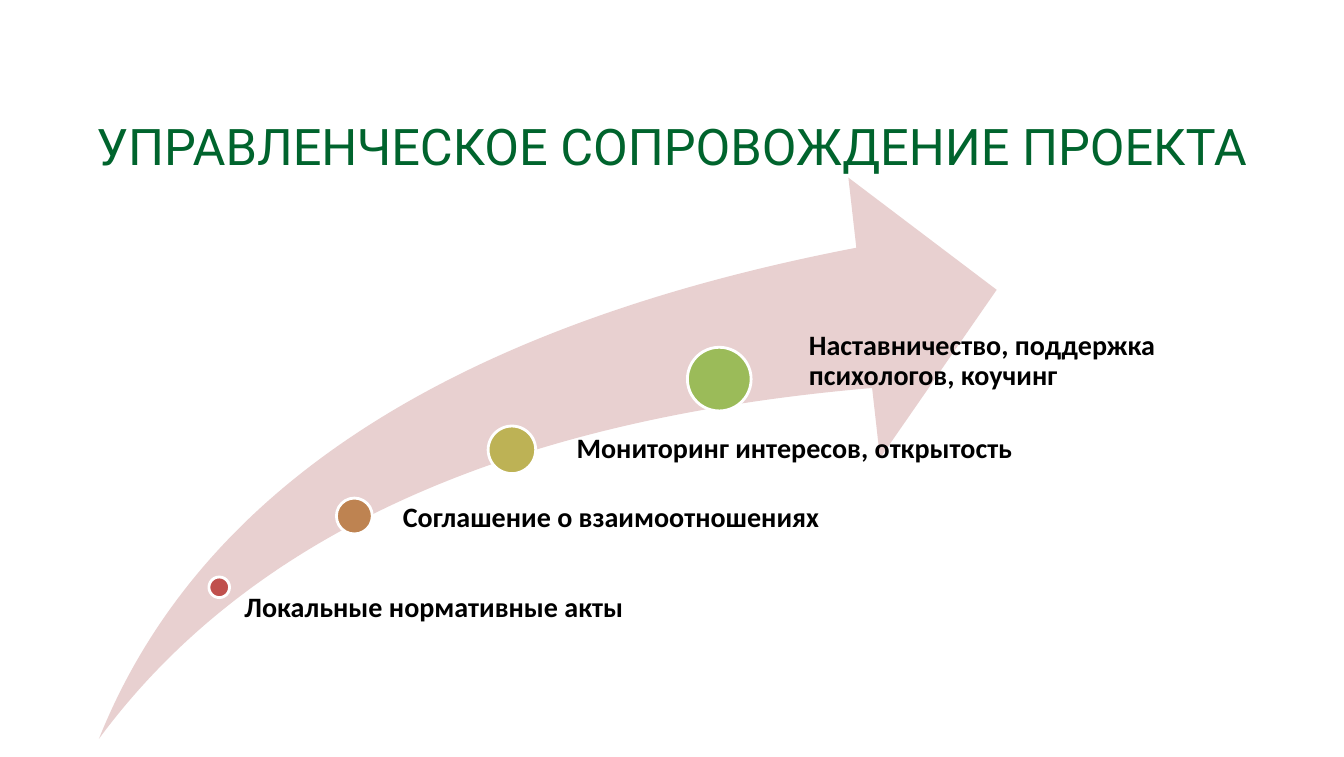
from dataclasses import dataclass

from pptx import Presentation
from pptx.dml.color import RGBColor
from pptx.enum.shapes import MSO_SHAPE
from pptx.enum.text import MSO_ANCHOR, MSO_AUTO_SIZE, PP_ALIGN
from pptx.util import Inches, Pt

# Content: places are percentages of the arrow's width and height
TITLE = "УПРАВЛЕНЧЕСКОЕ СОПРОВОЖДЕНИЕ ПРОЕКТА"
STEPS = [
    # text, colour, dot (centre x, centre y, diameter), label (x, y, width, height), inset
    ("Локальные нормативные акты", "C0504D",
     (13.4, 73, 2.3), (14.06, 74.1, 54.2, 18.5), 2.14),
    ("Соглашение о взаимоотношениях", "BE8351",
     (28.45, 60.3, 4), (32.62, 58.1, 57.8, 10.25), 1.24),
    ("Мониторинг интересов, открытость", "BDB255",
     (46, 48.5, 5.3), (50.4, 45.7, 57.5, 9.2), 2.81),
    ("Наставничество, поддержка психологов, коучинг", "9BBB59",
     (69.1, 35.9, 7.1), (75.37, 27.35, 47.25, 13.3), 3.71),
]


@dataclass(frozen=True)
class Theme:
    title_font: str = "Roboto"
    label_font: str = "Calibri"
    title_size: int = 36
    label_size: int = 20
    title: str = "00642D"
    label: str = "000000"
    arrow: str = "E8D0D0"
    outline: str = "FFFFFF"
    outline_width: int = 2
    line_spacing: float = 0.9
    label_gap: int = 7


THEME = Theme()
SLIDE_WIDTH, SLIDE_HEIGHT = Inches(13.31), Inches(7.5)
ARROW_LEFT, ARROW_TOP = Inches(0.98), Inches(1.76)
ARROW_WIDTH, ARROW_HEIGHT = Inches(8.89), Inches(5.56)
TITLE_TOP, TITLE_HEIGHT = Inches(1.21), Inches(0.55)


def across(percent):
    return int(ARROW_WIDTH * percent / 100)


def down(percent):
    return int(ARROW_HEIGHT * percent / 100)


def add_filled(page, kind, area, colour):
    shape = page.shapes.add_shape(kind, *area)
    shape.shadow.inherit = False
    shape.fill.solid()
    shape.fill.fore_color.rgb = RGBColor.from_string(colour)
    shape.line.fill.background()
    return shape


def write(box, text, font, size, colour, bold=False, align=PP_ALIGN.LEFT, inset=0):
    frame = box.text_frame
    frame.word_wrap = True
    frame.auto_size = MSO_AUTO_SIZE.NONE
    frame.vertical_anchor = MSO_ANCHOR.TOP
    frame.margin_left = inset
    frame.margin_top = frame.margin_right = frame.margin_bottom = 0
    para = frame.paragraphs[0]
    para.text = text
    para.alignment = align
    para.line_spacing = THEME.line_spacing
    para.space_before = Pt(0)
    para.font.name = font
    para.font.size = Pt(size)
    para.font.bold = bold
    para.font.color.rgb = RGBColor.from_string(colour)
    return para


def add_title(page):
    title = page.shapes.title
    title.left, title.top = 0, TITLE_TOP
    title.width, title.height = SLIDE_WIDTH, TITLE_HEIGHT
    write(title, TITLE, THEME.title_font, THEME.title_size, THEME.title,
          align=PP_ALIGN.CENTER)


def add_arrow(page):
    area = (ARROW_LEFT, ARROW_TOP, ARROW_WIDTH, ARROW_HEIGHT)
    arrow = add_filled(page, MSO_SHAPE.SWOOSH_ARROW, area, THEME.arrow)
    arrow.adjustments[0] = arrow.adjustments[1] = 0.25


def add_step(page, text, colour, dot_place, label_place, inset):
    # Dot on the arrow
    centre_x, centre_y, diameter = dot_place
    side = across(diameter)
    left = ARROW_LEFT + across(centre_x) - side // 2
    top = ARROW_TOP + down(centre_y) - side // 2
    dot = add_filled(page, MSO_SHAPE.OVAL, (left, top, side, side), colour)
    dot.line.color.rgb = RGBColor.from_string(THEME.outline)
    dot.line.width = Pt(THEME.outline_width)

    # Label beside it
    x, y, width, height = label_place
    label = page.shapes.add_textbox(ARROW_LEFT + across(x), ARROW_TOP + down(y),
                                    across(width), down(height))
    para = write(label, text, THEME.label_font, THEME.label_size, THEME.label,
                 bold=True, inset=across(inset))
    para.space_after = Pt(THEME.label_gap)


def main():
    deck = Presentation()
    deck.slide_width, deck.slide_height = SLIDE_WIDTH, SLIDE_HEIGHT
    page = deck.slides.add_slide(deck.slide_layouts.get_by_name("Title Only"))
    add_title(page)
    add_arrow(page)
    for step in STEPS:
        add_step(page, *step)
    deck.save("out.pptx")


if __name__ == "__main__":
    main()
